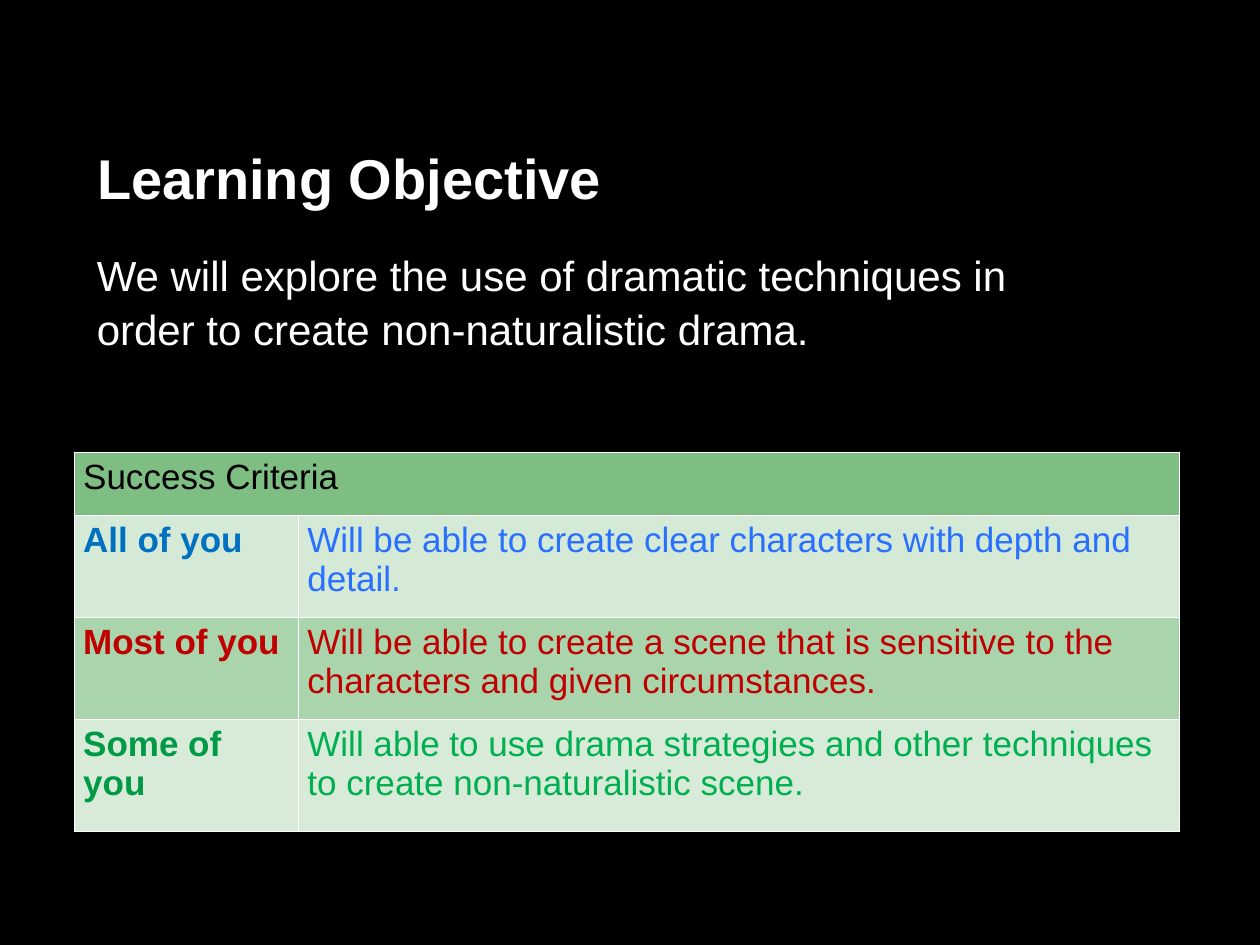
"""Build the learning objective slide with its table of success criteria."""
from dataclasses import dataclass

from lxml.etree import SubElement
from pptx import Presentation
from pptx.dml.color import RGBColor
from pptx.enum.text import MSO_ANCHOR as Anchor, PP_ALIGN as Align
from pptx.oxml.ns import qn
from pptx.util import Inches, Pt

FONT = "Arial"
WHITE = "FFFFFF"
TEXT_LEFT, TEXT_WIDTH = 0.67, 8.27
LINE_SPACING = 1.07
COLUMNS = (1.78, 6.99)
ROWS = (0.5, 0.81, 0.81, 0.89)


@dataclass(frozen=True)
class Criterion:
    group: str
    group_color: str
    outcome: str
    outcome_color: str
    fill: str


CRITERIA = (
    Criterion("All of you", "0070C0",
              "Will be able to create clear characters with depth and detail.",
              "2970FF", "D4E9D6"),
    Criterion("Most of you", "C00000",
              "Will be able to create a scene that is sensitive to the "
              "characters and given circumstances.",
              "C00000", "A9D4AC"),
    Criterion("Some of you", "009A46",
              "Will able to use drama strategies and other techniques "
              "to create non-naturalistic scene.",
              "00B050", "D7EBD8"),
)


def rgb(color: str) -> RGBColor:
    return RGBColor.from_string(color)


def write(frame, text: str, size: float, color: str, bold: bool = False):
    """Fill a text frame with one left-aligned paragraph."""
    frame.word_wrap = True
    frame.text = text
    paragraph = frame.paragraphs[0]
    paragraph.alignment = Align.LEFT
    font = paragraph.font
    font.name, font.size, font.bold = FONT, Pt(size), bold
    font.color.rgb = rgb(color)
    return paragraph


def place(shape, top: float, height: float) -> None:
    shape.left, shape.top = Inches(TEXT_LEFT), Inches(top)
    shape.width, shape.height = Inches(TEXT_WIDTH), Inches(height)
    shape.text_frame.vertical_anchor = Anchor.TOP


def style_cell(cell, fill: str) -> None:
    properties = cell._tc.get_or_add_tcPr()
    for side in ("a:lnL", "a:lnR", "a:lnT", "a:lnB"):
        line = SubElement(properties, qn(side), w=str(Pt(1)))
        solid = SubElement(line, qn("a:solidFill"))
        SubElement(solid, qn("a:srgbClr"), val=WHITE)
    cell.fill.solid()
    cell.fill.fore_color.rgb = rgb(fill)
    cell.margin_left = cell.margin_right = Inches(0.07)
    cell.margin_top = cell.margin_bottom = Inches(0.04)


def add_criteria(slide) -> None:
    table = slide.shapes.add_table(
        len(ROWS), len(COLUMNS), Inches(0.59), Inches(3.59),
        Inches(sum(COLUMNS)), Inches(sum(ROWS))).table
    for column, width in zip(table.columns, COLUMNS):
        column.width = Inches(width)
    for row, height in zip(table.rows, ROWS):
        row.height = Inches(height)

    header, header_end = table.rows[0].cells
    header.merge(header_end)
    for cell in (header, header_end):
        style_cell(cell, "7FBE83")
    write(header.text_frame, "Success Criteria", 20, "000000")

    for index, item in enumerate(CRITERIA, start=1):
        group, outcome = table.rows[index].cells
        for cell in (group, outcome):
            style_cell(cell, item.fill)
        write(group.text_frame, item.group, 20, item.group_color, bold=True)
        write(outcome.text_frame, item.outcome, 20, item.outcome_color)


def main() -> None:
    deck = Presentation()
    deck.slide_width, deck.slide_height = Inches(10), Inches(7.5)
    slide = deck.slides.add_slide(deck.slide_layouts[5])
    slide.background.fill.solid()
    slide.background.fill.fore_color.rgb = rgb("000000")

    title = slide.shapes.title
    objective = slide.shapes.add_textbox(0, 0, 0, 0)
    place(title, 1.05, 0.65)
    place(objective, 1.9, 0.95)
    heading = write(title.text_frame, "Learning Objective", 32, WHITE, bold=True)
    body = write(objective.text_frame,
                 "We will explore the use of dramatic techniques in order "
                 "to create non-naturalistic drama.", 24, WHITE)
    heading.line_spacing = body.line_spacing = LINE_SPACING

    add_criteria(slide)
    deck.save("out.pptx")


if __name__ == "__main__":
    main()
